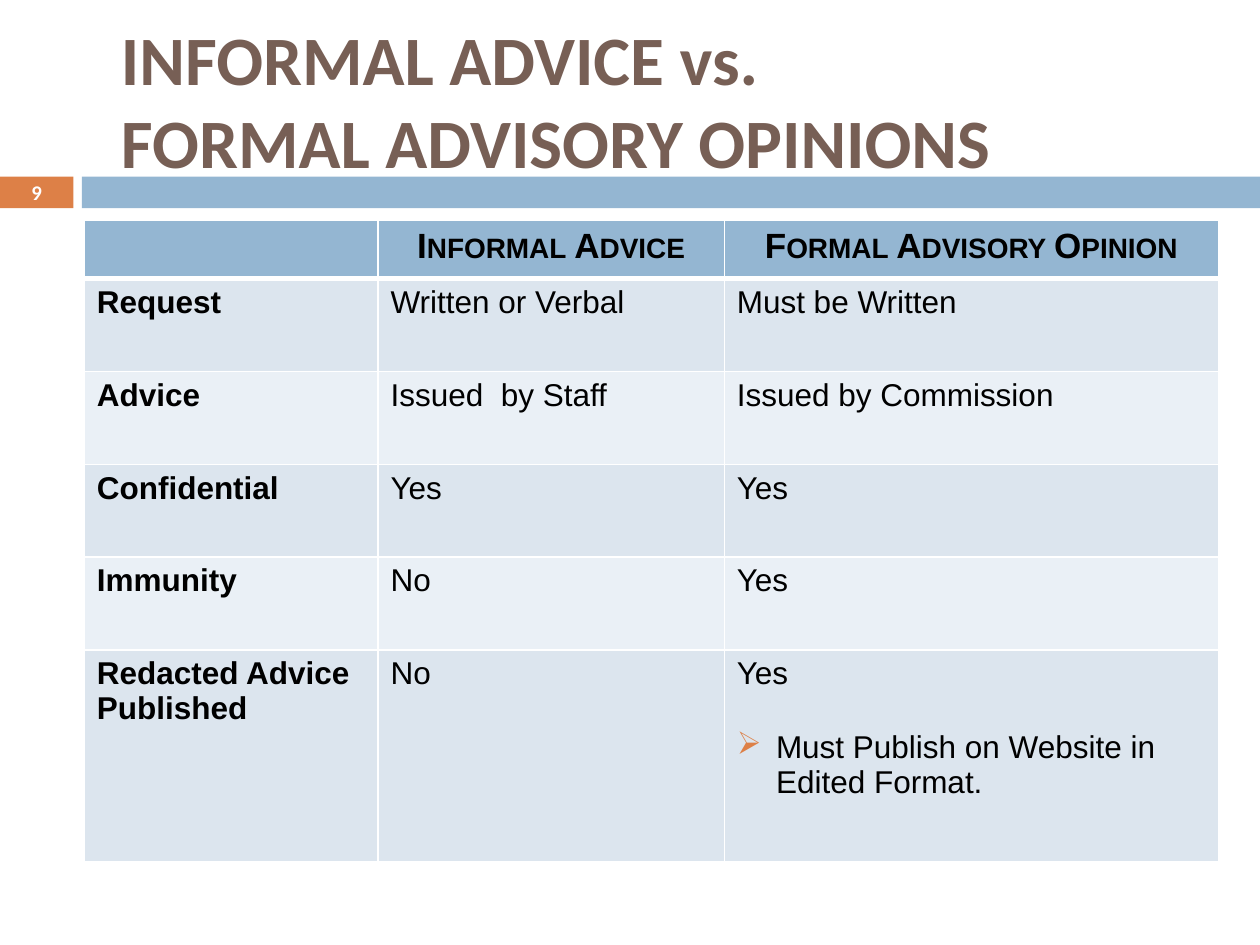
from dataclasses import dataclass

from lxml.etree import SubElement
from pptx import Presentation
from pptx.dml.color import RGBColor as Rgb
from pptx.enum.shapes import MSO_SHAPE as Preset
from pptx.enum.text import MSO_ANCHOR as Anchor, PP_ALIGN as Align
from pptx.oxml.ns import qn
from pptx.util import Cm, Pt


@dataclass(frozen=True)
class Theme:
    orange: str = "DD8047"
    blue: str = "94B6D2"
    brown: str = "775F55"
    white: str = "FFFFFF"
    black: str = "000000"
    bands: tuple = ("DCE5EE", "EAF0F6")
    heading_font: str = "Calibri"
    body_font: str = "Arial"
    title_size: float = 39.6
    number_size: float = 11.9
    header_size: float = 20
    body_size: float = 18
    bullet_gap: float = 22
    rule: float = 1
    header_rule: float = 3


THEME = Theme()
COLUMNS = (5.92, 6.98, 9.96)
ROWS = (1.17, 1.87, 1.87, 1.87, 1.87, 4.27)
COMPARISON = (
    ("", "Informal Advice", "Formal Advisory Opinion"),
    ("Request", "Written or Verbal", "Must be Written"),
    ("Advice", "Issued  by Staff", "Issued by Commission"),
    ("Confidential", "Yes", "Yes"),
    ("Immunity", "No", "Yes"),
    ("Redacted Advice Published", "No", "Yes"),
)
PUBLISHING_NOTE = "Must Publish on Website in Edited Format."


def style(paragraph, font, size, color, bold=False, align=Align.LEFT):
    paragraph.alignment = align
    paragraph.font.name = font
    paragraph.font.size = Pt(size)
    paragraph.font.bold = bold
    paragraph.font.color.rgb = Rgb.from_string(color)


def add_bar(slide, left, width, color):
    bar = slide.shapes.add_shape(Preset.RECTANGLE, Cm(left), Cm(3.56), Cm(width), Cm(0.64))
    bar.shadow.inherit = False
    bar.fill.solid()
    bar.fill.fore_color.rgb = Rgb.from_string(color)
    bar.line.fill.background()


def add_text(slide, text, left, top, width, height, **look):
    frame = slide.shapes.add_textbox(Cm(left), Cm(top), Cm(width), Cm(height)).text_frame
    frame.word_wrap = True
    frame.vertical_anchor = Anchor.MIDDLE
    paragraph = frame.paragraphs[0]
    paragraph.text = text
    style(paragraph, THEME.heading_font, bold=True, **look)
    return frame


def add_borders(cell, top, bottom):
    properties = cell._tc.get_or_add_tcPr()
    widths = {"lnL": THEME.rule, "lnR": THEME.rule, "lnT": top, "lnB": bottom}
    for side, width in widths.items():
        border = SubElement(properties, qn(f"a:{side}"), w=str(Pt(width)))
        fill = SubElement(border, qn("a:solidFill"))
        SubElement(fill, qn("a:srgbClr"), val=THEME.white)


def add_bullet(frame, text):
    paragraph = frame.add_paragraph()
    paragraph.text = text
    properties = paragraph._p.get_or_add_pPr()
    properties.set("marL", str(Cm(0.79)))
    properties.set("indent", str(Cm(-0.79)))
    color = SubElement(properties, qn("a:buClr"))
    SubElement(color, qn("a:srgbClr"), val=THEME.orange)
    SubElement(properties, qn("a:buChar"), char="➢")
    paragraph.space_before = Pt(THEME.bullet_gap)
    style(paragraph, THEME.body_font, THEME.body_size, THEME.black)


def fill_cell(cell, text, row, column):
    header = row == 0
    add_borders(
        cell,
        THEME.header_rule if row == 1 else THEME.rule,
        THEME.header_rule if header else THEME.rule,
    )
    cell.fill.solid()
    background = THEME.blue if header else THEME.bands[(row - 1) % 2]
    cell.fill.fore_color.rgb = Rgb.from_string(background)
    paragraph = cell.text_frame.paragraphs[0]
    paragraph.text = text
    style(
        paragraph,
        THEME.body_font,
        THEME.header_size if header else THEME.body_size,
        THEME.black,
        bold=header or column == 0,
        align=Align.CENTER if header else Align.LEFT,
    )
    if header:
        paragraph.font._element.set("cap", "small")


def add_comparison(slide):
    table = slide.shapes.add_table(
        len(ROWS), len(COLUMNS), Cm(1.7), Cm(4.45), Cm(sum(COLUMNS)), Cm(sum(ROWS))
    ).table
    for column, width in zip(table.columns, COLUMNS):
        column.width = Cm(width)
    for row, height in zip(table.rows, ROWS):
        row.height = Cm(height)
    for row, texts in enumerate(COMPARISON):
        for column, text in enumerate(texts):
            fill_cell(table.cell(row, column), text, row, column)
    add_bullet(table.cell(len(ROWS) - 1, len(COLUMNS) - 1).text_frame, PUBLISHING_NOTE)


def main():
    deck = Presentation()
    deck.slide_width, deck.slide_height = Cm(25.4), Cm(19.05)
    slide = deck.slides.add_slide(deck.slide_layouts[6])
    add_bar(slide, 0, 1.48, THEME.orange)
    add_bar(slide, 1.65, 23.75, THEME.blue)
    title = add_text(
        slide, "INFORMAL ADVICE vs.\vFORMAL ADVISORY OPINIONS",
        1.7, 0.64, 22.66, 2.74, size=THEME.title_size, color=THEME.brown,
    )
    title.margin_left = Cm(0.74)
    add_text(
        slide, "9", 0, 3.53, 1.48, 0.69,
        size=THEME.number_size, color=THEME.white, align=Align.CENTER,
    )
    add_comparison(slide)
    deck.save("out.pptx")


if __name__ == "__main__":
    main()
